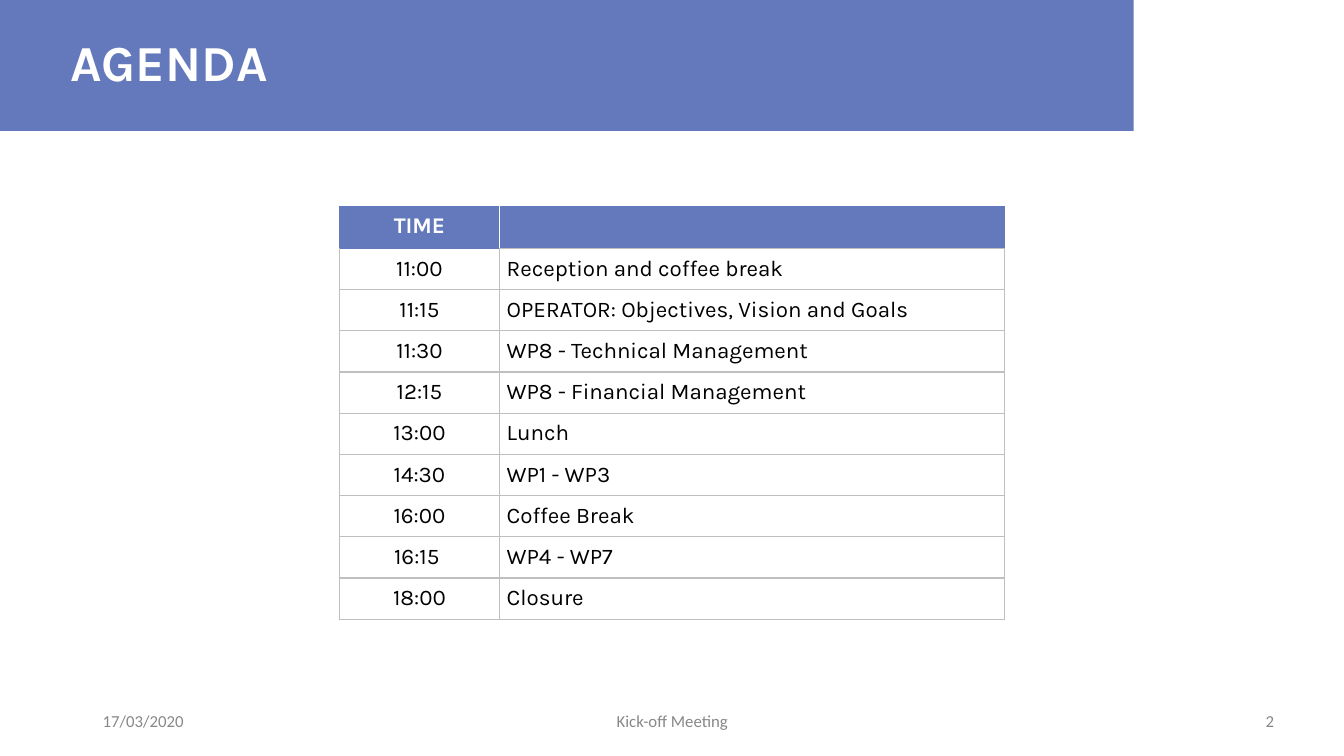
from dataclasses import dataclass

from lxml import etree
from pptx import Presentation
from pptx import util as u
from pptx.dml.color import RGBColor
from pptx.enum import shapes, text
from pptx.oxml import ns

BLUE, WHITE, BLACK = "6379BB", "FFFFFF", "000000"
LINE_GREY, FOOTER_GREY = "BFBFBF", "888888"
LEFT, CENTER, RIGHT = text.PP_ALIGN.LEFT, text.PP_ALIGN.CENTER, text.PP_ALIGN.RIGHT


@dataclass
class Style:
    font: str
    size: int
    color: str
    bold: bool = False


@dataclass
class Label:
    words: str
    left: float
    top: float
    width: float
    height: float
    style: Style
    align: text.PP_ALIGN = LEFT
    spacing: float = 1.0


@dataclass
class Item:
    time: str
    topic: str


TITLE = Style("Karla", 36, WHITE, True)
HEADER = Style("Karla", 16, WHITE, True)
BODY = Style("Karla", 16, BLACK)
FOOTER = Style("Calibri", 12, FOOTER_GREY)

LABELS = [
    Label("2", 24.74, 17.65, 7.62, 1.02, FOOTER, RIGHT),
    Label("17/03/2020", 2.34, 17.65, 7.62, 1.02, FOOTER),
    Label("Kick-off Meeting", 11.23, 17.65, 11.43, 1.02, FOOTER, CENTER),
    Label("AGENDA", 1.52, 0.91, 27.05, 1.45, TITLE, LEFT, 0.9),
]

AGENDA = [
    Item("11:00", "Reception and coffee break"),
    Item("11:15", "OPERATOR: Objectives, Vision and Goals"),
    Item("11:30", "WP8 - Technical Management"),
    Item("12:15", "WP8 - Financial Management"),
    Item("13:00", "Lunch"),
    Item("14:30", "WP1 - WP3"),
    Item("16:00", "Coffee Break"),
    Item("16:15 ", "WP4 - WP7"),
    Item("18:00", "Closure"),
]

COLUMNS = (4.04, 12.73)
HEADER_HEIGHT, ROW_HEIGHT = 1.06, 1.01


def rgb(value: str) -> RGBColor:
    return RGBColor.from_string(value)


def add_run(p, words: str, style: Style, align: text.PP_ALIGN) -> None:
    p.alignment = align
    r = p.add_run()
    r.text = words
    r.font.name = style.font
    r.font.size = u.Pt(style.size)
    r.font.bold = style.bold
    r.font.color.rgb = rgb(style.color)


def add_banner(s) -> None:
    sp = s.shapes.add_shape(
        shapes.MSO_SHAPE.RECTANGLE, u.Cm(-0.03), u.Cm(-0.03), u.Cm(28.6), u.Cm(3.33)
    )
    sp.shadow.inherit = False
    sp.fill.solid()
    sp.fill.fore_color.rgb = rgb(BLUE)
    sp.line.fill.background()


def add_label(s, label: Label) -> None:
    sp = s.shapes.add_textbox(
        u.Cm(label.left), u.Cm(label.top), u.Cm(label.width), u.Cm(label.height)
    )
    tf = sp.text_frame
    tf.word_wrap = True
    tf.vertical_anchor = text.MSO_ANCHOR.MIDDLE
    p = tf.paragraphs[0]
    p.line_spacing = label.spacing
    add_run(p, label.words, label.style, label.align)


def set_borders(cell, left: str, right: str, top: str, bottom: str) -> None:
    tc_pr = cell._tc.get_or_add_tcPr()
    sides = {"lnL": left, "lnR": right, "lnT": top, "lnB": bottom}
    for i, (tag, color) in enumerate(sides.items()):
        ln = etree.Element(ns.qn(f"a:{tag}"), w=str(u.Pt(1)))
        fill = etree.SubElement(ln, ns.qn("a:solidFill"))
        etree.SubElement(fill, ns.qn("a:srgbClr"), val=color)
        tc_pr.insert(i, ln)


def fill_cell(cell, words: str, style: Style, align: text.PP_ALIGN) -> None:
    cell.margin_left = cell.margin_right = u.Cm(0.18)
    cell.margin_top = cell.margin_bottom = u.Cm(0.18)
    add_run(cell.text_frame.paragraphs[0], words, style, align)


def add_agenda(s) -> None:
    height = HEADER_HEIGHT + ROW_HEIGHT * len(AGENDA)
    table = s.shapes.add_table(
        len(AGENDA) + 1, len(COLUMNS),
        u.Cm(8.55), u.Cm(5.2), u.Cm(sum(COLUMNS)), u.Cm(height),
    ).table
    table.horz_banding = False
    for column, width in zip(table.columns, COLUMNS):
        column.width = u.Cm(width)
    for i, row in enumerate(table.rows):
        row.height = u.Cm(ROW_HEIGHT if i else HEADER_HEIGHT)
        for cell in row.cells:
            if i:
                cell.fill.background()
            else:
                cell.fill.solid()
                cell.fill.fore_color.rgb = rgb(BLUE)

    fill_cell(table.cell(0, 0), "TIME", HEADER, CENTER)
    set_borders(table.cell(0, 0), BLUE, WHITE, BLUE, BLUE)
    set_borders(table.cell(0, 1), WHITE, BLUE, BLUE, LINE_GREY)
    for i, item in enumerate(AGENDA, 1):
        time, topic = table.cell(i, 0), table.cell(i, 1)
        fill_cell(time, item.time, BODY, CENTER)
        fill_cell(topic, item.topic, BODY, LEFT)
        top = BLUE if i == 1 else LINE_GREY
        set_borders(time, LINE_GREY, LINE_GREY, top, LINE_GREY)
        set_borders(topic, LINE_GREY, LINE_GREY, LINE_GREY, LINE_GREY)


def main() -> None:
    prs = Presentation()
    prs.slide_width, prs.slide_height = u.Cm(33.87), u.Cm(19.05)
    s = prs.slides.add_slide(prs.slide_layouts[6])
    add_banner(s)
    for label in LABELS:
        add_label(s, label)
    add_agenda(s)
    prs.save("out.pptx")


if __name__ == "__main__":
    main()
